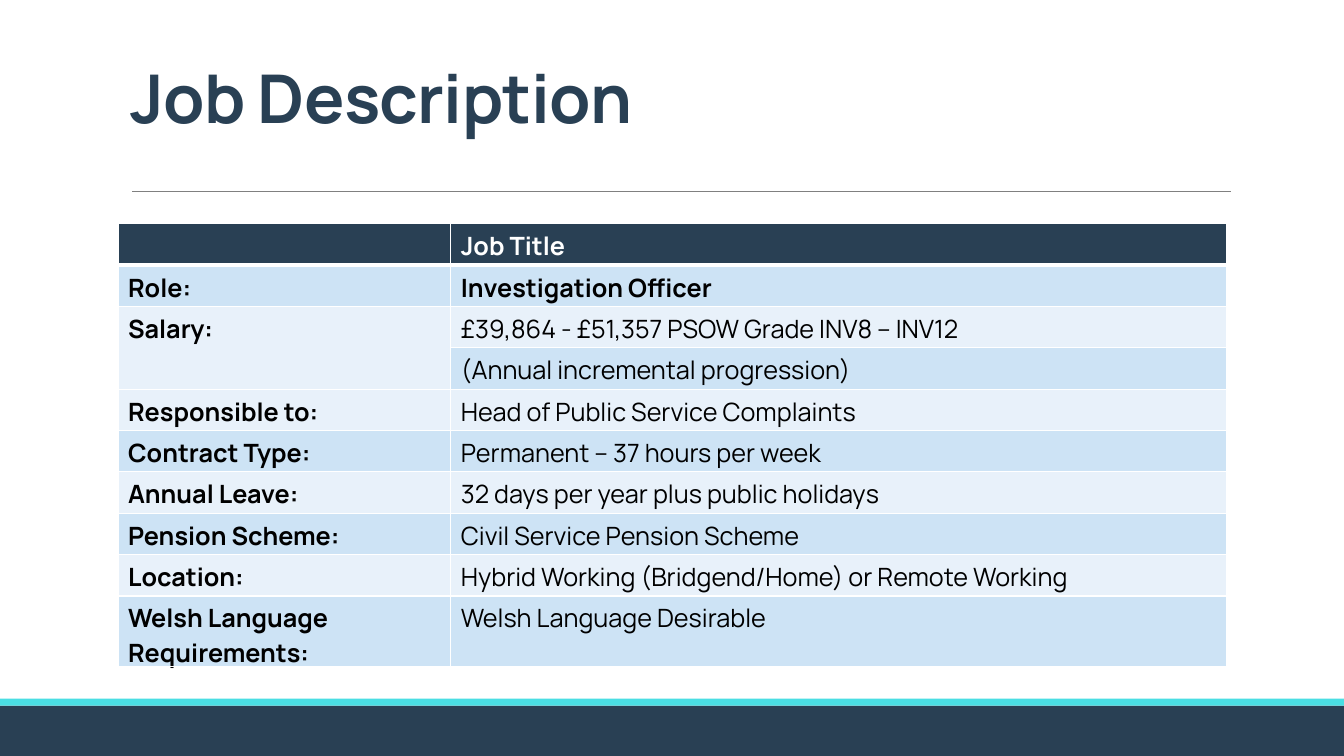
from lxml.etree import SubElement
from pptx import Presentation
from pptx.dml.color import RGBColor
from pptx.enum.shapes import MSO_CONNECTOR as Connector, MSO_SHAPE as Preset
from pptx.enum.text import MSO_ANCHOR as Anchor
from pptx.oxml import parse_xml
from pptx.oxml.ns import nsdecls, qn
from pptx.util import Inches, Pt

NAVY = RGBColor(0x29, 0x40, 0x54)
TURQUOISE = RGBColor(0x4A, 0xDE, 0xE3)
GREY = RGBColor(0x80, 0x80, 0x80)
WHITE = RGBColor(0xFF, 0xFF, 0xFF)
BLACK = RGBColor(0x00, 0x00, 0x00)
SKY = RGBColor(0xCD, 0xE3, 0xF5)
PALE = RGBColor(0xE8, 0xF1, 0xFA)

WIDTH, HEIGHT = Inches(13.33), Inches(7.5)
GRID = 100
LABEL_COLS, DETAIL_COLS = 24.76, 57.76
ROW_SPAN = 5.47

TITLE_FORMAT = {"name": "Manrope", "size": Pt(48), "bold": True}
CELL_FORMAT = {"name": "Manrope", "size": Pt(18)}

JOB_DETAILS = [
    ("", "Job Title"),
    ("Role:", "Investigation Officer"),
    ("Salary:", "£39,864 - £51,357 PSOW Grade INV8 – INV12"),
    ("", "(Annual incremental progression)"),
    ("Responsible to:", "Head of Public Service Complaints"),
    ("Contract Type:", "Permanent – 37 hours per week"),
    ("Annual Leave:", "32 days per year plus public holidays"),
    ("Pension Scheme:", "Civil Service Pension Scheme"),
    ("Location:", "Hybrid Working (Bridgend/Home) or Remote Working"),
    ("Welsh Language Requirements:", "Welsh Language Desirable"),
]
SALARY_ROW = 2
BOLD_DETAIL_ROWS = (0, 1)


def across(cols):
    return round(WIDTH * cols / GRID)


def down(rows):
    return round(HEIGHT * rows / GRID)


def box(left, top, cols, rows):
    return across(left), down(top), across(cols), down(rows)


def apply_format(font, values, color):
    for attribute, value in values.items():
        setattr(font, attribute, value)
    font.color.rgb = color


def add_band(slide, top, rows, color):
    band = slide.shapes.add_shape(Preset.RECTANGLE, *box(0, top, GRID, rows))
    band.shadow.inherit = False
    band.fill.solid()
    band.fill.fore_color.rgb = color
    band.line.fill.background()


def add_rule(slide, start, end, row):
    rule = slide.shapes.add_connector(
        Connector.STRAIGHT, across(start), down(row), across(end), down(row))
    rule.line.color.rgb = GREY
    rule.line.width = Pt(0.5)
    SubElement(rule._element.spPr, qn("a:effectLst"))


def add_title(slide, text):
    frame = slide.shapes.add_textbox(*box(9, 4.13, 82.52, 14.67)).text_frame
    frame.word_wrap = True
    frame.vertical_anchor = Anchor.BOTTOM
    heading = frame.paragraphs[0]
    heading.line_spacing = 0.85
    run = heading.add_run()
    run.text = text
    apply_format(run.font, TITLE_FORMAT, NAVY)
    run.font._element.set("spc", "-50")


def add_borders(cell, widths):
    properties = cell._tc.get_or_add_tcPr()
    for position, (side, width) in enumerate(widths.items()):
        properties.insert(position, parse_xml(
            f'<a:ln{side} {nsdecls("a")} w="{Pt(width)}"><a:solidFill>'
            f'<a:srgbClr val="{WHITE}"/></a:solidFill></a:ln{side}>'))


def fill_cell(cell, text, fill, color, bold, borders):
    cell.fill.solid()
    cell.fill.fore_color.rgb = fill
    add_borders(cell, borders)
    cell.text = text
    paragraph = cell.text_frame.paragraphs[0]
    for font in [paragraph.font, *(run.font for run in paragraph.runs)]:
        apply_format(font, {**CELL_FORMAT, "bold": bold}, color)
    if not text:
        paragraph._p.get_or_add_endParaRPr().set("sz", "1800")


def add_job_table(slide):
    table = slide.shapes.add_table(
        len(JOB_DETAILS), 2,
        *box(8.78, 29.6, LABEL_COLS + DETAIL_COLS, ROW_SPAN * len(JOB_DETAILS))).table
    for column, cols in zip(table.columns, (LABEL_COLS, DETAIL_COLS)):
        column.width = across(cols)
    for index, details in enumerate(JOB_DETAILS):
        table.rows[index].height = down(ROW_SPAN)
        header = index == 0
        fill = NAVY if header else (PALE, SKY)[index % 2]
        color = WHITE if header else BLACK
        borders = {"L": 1, "R": 1, "T": 3 if index == 1 else 1, "B": 3 if header else 1}
        for side, text in enumerate(details):
            bold = side == 0 or index in BOLD_DETAIL_ROWS
            fill_cell(table.cell(index, side), text, fill, color, bold, borders)
    table.cell(SALARY_ROW, 0).merge(table.cell(SALARY_ROW + 1, 0))


def main():
    deck = Presentation()
    deck.slide_width, deck.slide_height = WIDTH, HEIGHT
    slide = deck.slides.add_slide(deck.slide_layouts[6])
    add_band(slide, 93.33, 6.67, NAVY)
    add_band(slide, 92.4, 0.93, TURQUOISE)
    add_rule(slide, 9.83, 91.6, 25.33)
    add_title(slide, "Job Description")
    add_job_table(slide)
    deck.save("out.pptx")


if __name__ == "__main__":
    main()
